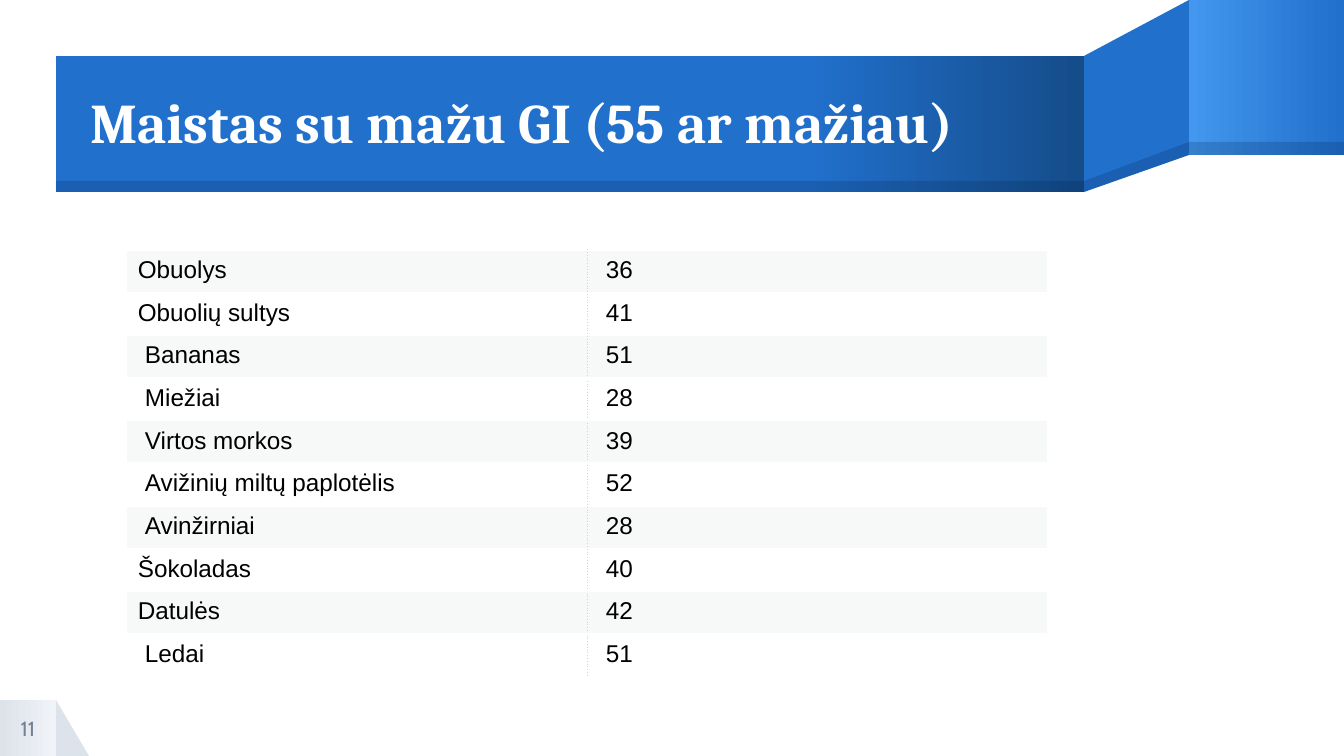
from copy import deepcopy

from lxml import etree
from pptx import Presentation
from pptx.dml.color import RGBColor
from pptx.enum.shapes import MSO_SHAPE
from pptx.enum.text import MSO_ANCHOR, PP_ALIGN
from pptx.oxml.ns import qn
from pptx.util import Pt

RECT, TRIANGLE = MSO_SHAPE.RECTANGLE, MSO_SHAPE.RIGHT_TRIANGLE
MIDDLE = MSO_ANCHOR.MIDDLE
LEFT, CENTER = PP_ALIGN.LEFT, PP_ALIGN.CENTER

WHITE = RGBColor(0xFF, 0xFF, 0xFF)
BLACK = RGBColor(0x00, 0x00, 0x00)
BLUE = RGBColor(0x21, 0x70, 0xCC)
LIGHT_BLUE = RGBColor(0x43, 0x97, 0xEE)
DARK_BLUE = RGBColor(0x15, 0x4C, 0x8A)
SHADE = RGBColor(0x00, 0x1F, 0x46)
GRAY = RGBColor(0xDD, 0xE3, 0xEB)
PALE_GRAY = RGBColor(0xF0, 0xF3, 0xF7)
NUMBER_GRAY = RGBColor(0x74, 0x83, 0x94)
STRIPE = RGBColor(0xF7, 0xF9, 0xF9)
RULE = RGBColor(0xD3, 0xD3, 0xD3)

TITLE = "Maistas su mažu GI (55 ar mažiau)"
PAGE = "11"
PLAIN, INDENTED = 12, 19
FOODS = [
    ("Obuolys", PLAIN, "36"),
    ("Obuolių sultys", PLAIN, "41"),
    ("Bananas", INDENTED, "51"),
    ("Miežiai", INDENTED, "28"),
    ("Virtos morkos", INDENTED, "39"),
    ("Avižinių miltų paplotėlis", INDENTED, "52"),
    ("Avinžirniai", INDENTED, "28"),
    ("Šokoladas", PLAIN, "40"),
    ("Datulės", PLAIN, "42"),
    ("Ledai", INDENTED, "51"),
]

PAGE_TAB = (0, 700, 56, 56)
TAB_FOLD = (56, 700, 33, 56)
BANNER = (56, 56, 1028, 136)
BANNER_EDGE = (56, 181, 1028, 11)
RIBBON_END = (1189, 0, 155, 155)
RIBBON_EDGE = (1189, 142, 155, 13)
FOLD = [(1189, 0), (1084, 56), (1084, 192), (1189, 155)]
FOLD_EDGE = [(1189, 142), (1084, 181), (1084, 192), (1189, 155)]
TITLE_BOX = (90, 57, 994, 136)
TABLE_BOX = (126, 250, 922, 415)

EMU_PER_PX = 914400 / 134.4


def px(length):
    return round(length * EMU_PER_PX)


def emu(box):
    return [px(length) for length in box]


def paint(shape, colors, alpha=None):
    shape.shadow.inherit = False
    shape.line.fill.background()
    if isinstance(colors, RGBColor):
        shape.fill.solid()
        shape.fill.fore_color.rgb = colors
        if alpha:
            color = shape._element.spPr.find(f".//{qn('a:srgbClr')}")
            etree.SubElement(color, qn("a:alpha"), val=str(alpha * 1000))
        return
    shape.fill.gradient()
    shape.fill.gradient_angle = 0
    stop_list = shape._element.spPr.find(f".//{qn('a:gsLst')}")
    while len(stop_list) < len(colors):
        stop_list.append(deepcopy(stop_list[0]))
    for stop, (position, color) in zip(shape.fill.gradient_stops, colors):
        stop.position = position
        stop.color.rgb = color


def add_block(kind, box, colors, alpha=None):
    paint(slide.shapes.add_shape(kind, *emu(box)), colors, alpha)


def add_fold(corners, color, alpha=None):
    builder = slide.shapes.build_freeform(*corners[0], scale=EMU_PER_PX)
    builder.add_line_segments(corners[1:], close=True)
    paint(builder.convert_to_shape(), color, alpha)


def style(paragraph, face, size, color, bold=False):
    font = paragraph.font
    font.name, font.size, font.bold = face, Pt(size), bold
    font.color.rgb = color


def add_label(box, text, align, *look):
    frame = slide.shapes.add_textbox(*emu(box)).text_frame
    frame.word_wrap = True
    frame.vertical_anchor = MIDDLE
    frame.margin_left = frame.margin_right = 0
    frame.margin_top = frame.margin_bottom = 0
    paragraph = frame.paragraphs[0]
    paragraph.text, paragraph.alignment = text, align
    style(paragraph, *look)
    return paragraph


def add_border(cell, side):
    properties = cell._tc.get_or_add_tcPr()
    border = etree.Element(qn(f"a:{side}"), w=str(Pt(0.5)))
    fill = etree.SubElement(border, qn("a:solidFill"))
    etree.SubElement(fill, qn("a:srgbClr"), val=str(RULE))
    etree.SubElement(border, qn("a:prstDash"), val="dot")
    properties.insert(0, border)


def fill_cell(cell, text, indent, color, side):
    cell.text = text
    cell.margin_left = px(indent)
    cell.fill.solid()
    cell.fill.fore_color.rgb = color
    style(cell.text_frame.paragraphs[0], "Arial", 13, BLACK)
    add_border(cell, side)


prs = Presentation()
prs.slide_width, prs.slide_height = px(1344), px(756)
slide = prs.slides.add_slide(prs.slide_layouts[6])

add_block(TRIANGLE, TAB_FOLD, GRAY)
add_block(RECT, PAGE_TAB, [(0, GRAY), (1, PALE_GRAY)])
add_fold(FOLD, BLUE)
add_block(RECT, RIBBON_END, [(0, LIGHT_BLUE), (1, BLUE)])
add_block(RECT, BANNER, [(0, BLUE), (0.73, BLUE), (1, DARK_BLUE)])
add_fold(FOLD_EDGE, SHADE, 20)
for edge in (RIBBON_EDGE, BANNER_EDGE):
    add_block(RECT, edge, SHADE, 20)

title = add_label(TITLE_BOX, TITLE, LEFT, "Cambria", 30, WHITE, True)
title.line_spacing = 0.9
add_label(PAGE_TAB, PAGE, CENTER, "Cabin", 11, NUMBER_GRAY)

table = slide.shapes.add_table(len(FOODS), 2, *emu(TABLE_BOX)).table
table.first_row = table.horz_banding = False
for row, (food, indent, index) in enumerate(FOODS):
    color = WHITE if row % 2 else STRIPE
    fill_cell(table.cell(row, 0), food, indent, color, "lnR")
    fill_cell(table.cell(row, 1), index, INDENTED, color, "lnL")

prs.save("out.pptx")
